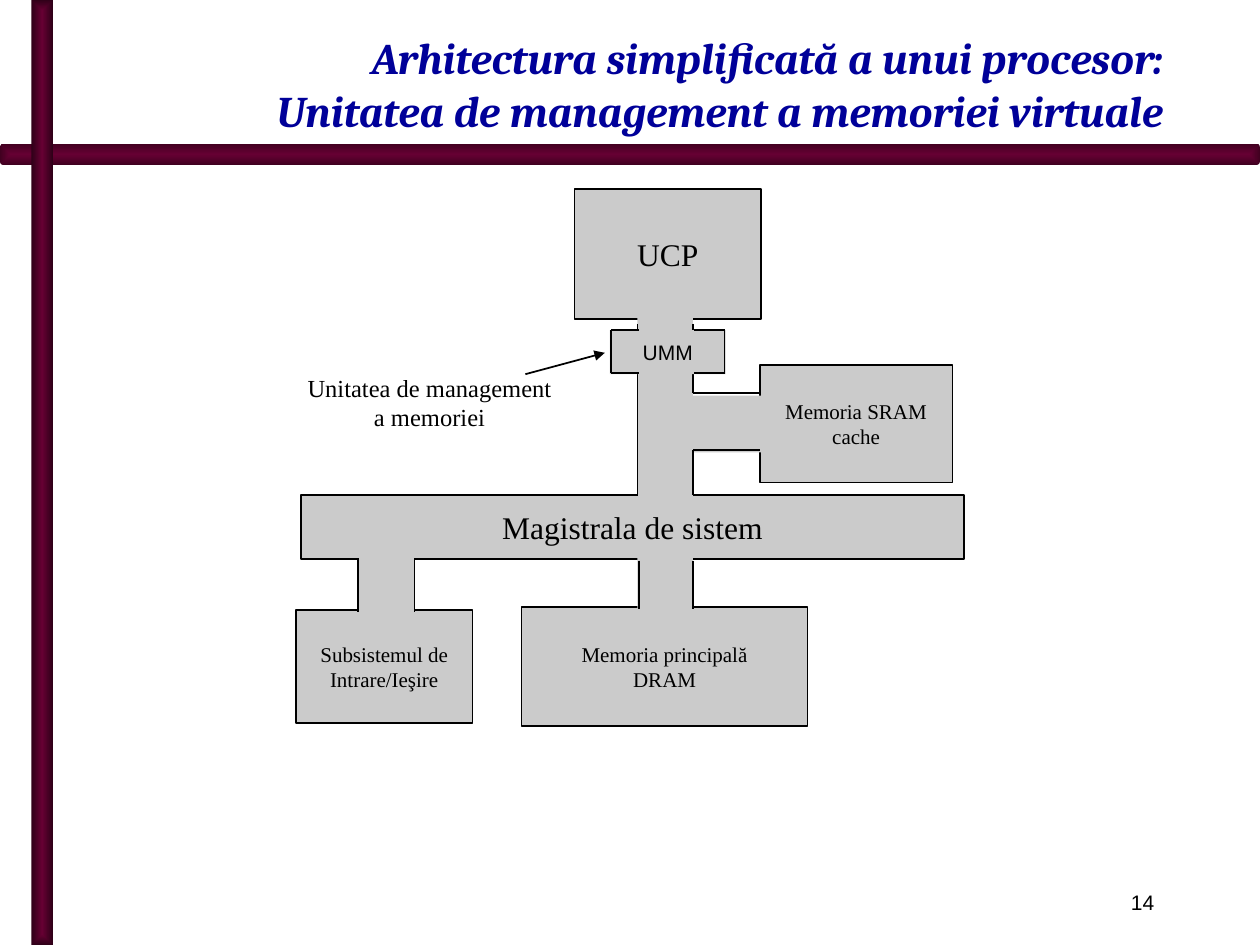
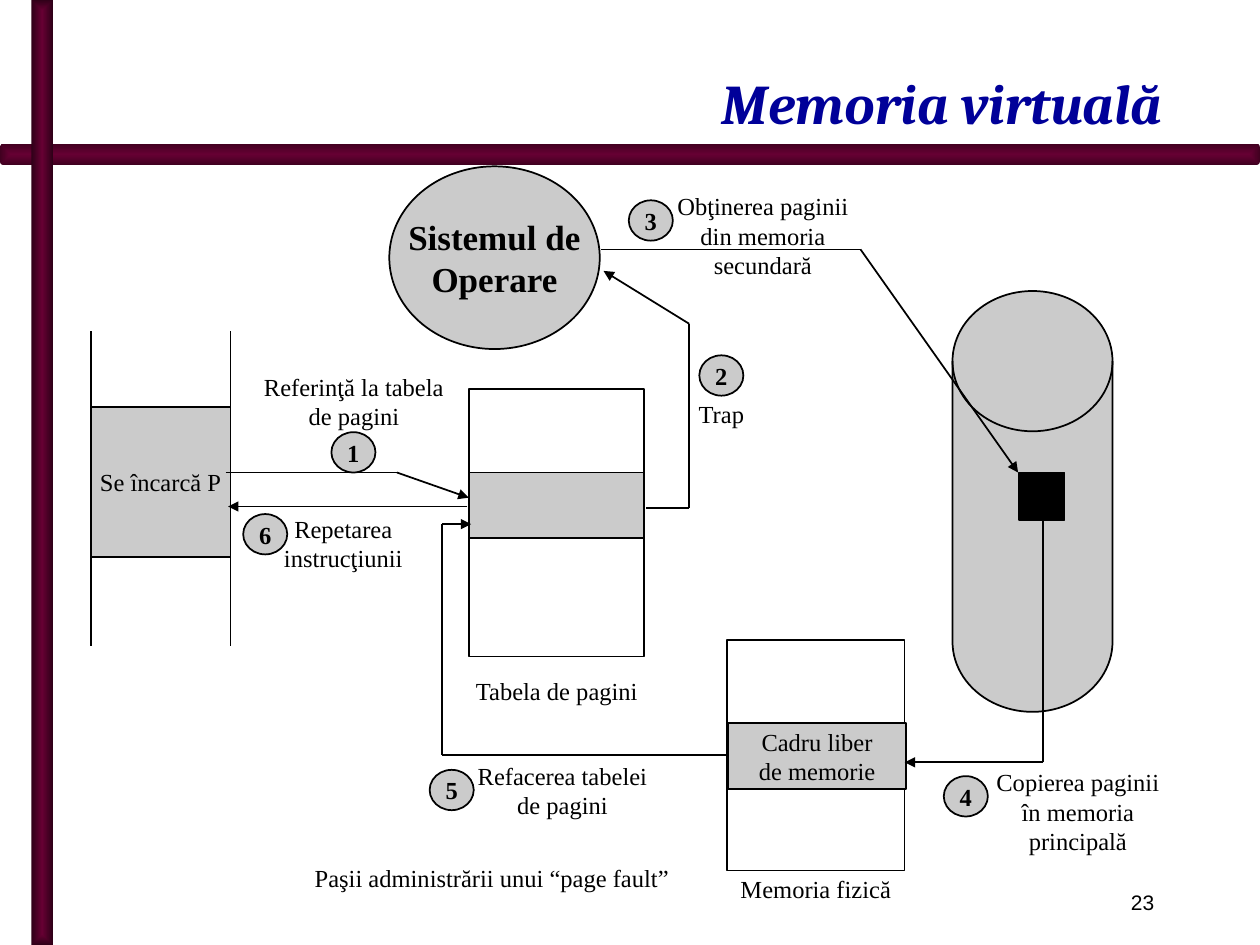
from lxml.etree import SubElement as Sub
from pptx import Presentation
from pptx.dml.color import RGBColor as Rgb
from pptx.enum.shapes import MSO_CONNECTOR as Conn, MSO_SHAPE as Kind
from pptx.enum.text import MSO_ANCHOR as Anchor, MSO_AUTO_SIZE as Auto, PP_ALIGN as Align
from pptx.oxml.ns import qn
from pptx.util import Pt

UNIT = 9144  # EMU per px, 100 px to the inch
HUES = {
    "ink": "000000",
    "gray": "CBCBCB",
    "title": "000099",
    "wine": "660033",
    "edge": "410020",
    "dark": "2F0018",
}
SERIF, SANS, HEAD = "Times New Roman", "Arial", "Cambria"


def px(*vals):
    return [v * UNIT for v in vals]


def hue(name):
    return Rgb.from_string(HUES[name])


class Deck:
    def __init__(self):
        self.prs = Presentation()
        self.prs.slide_width, self.prs.slide_height = px(1000, 750)
        self.slide = None

    def start(self, title, size, num):
        """Open a slide with its bands, title and page number."""
        self.slide = self.prs.slides.add_slide(self.prs.slide_layouts[5])
        self.band(Kind.ROUNDED_RECTANGLE, (0, 114, 1000, 17), "edge")
        self.band(Kind.RECTANGLE, (25, 0, 17, 750), "dark")
        head = self.slide.shapes.title
        head.left, head.top, head.width, head.height = px(83, 17, 850, 96)
        self.text(head, title, size, HEAD, "title", Align.RIGHT, Anchor.BOTTOM, True)
        head.text_frame.paragraphs[0].font.italic = True
        self.note((75, 701, 851, 30), str(num), 12, SANS, Align.RIGHT)

    def band(self, kind, at, rim):
        bar = self.shape(kind, at, None, False)
        bar.fill.gradient()
        for stop, name in zip(bar.fill.gradient_stops, ("wine", rim)):
            stop.color.rgb = hue(name)
        grad = bar.element.spPr.find(qn("a:gradFill"))
        grad.remove(grad.find(qn("a:lin")))
        way = Sub(grad, qn("a:path"), path="shape")
        Sub(way, qn("a:fillToRect"), l="50000", t="50000", r="50000", b="50000")

    def shape(self, kind, at, fill="gray", edge=True):
        item = self.slide.shapes.add_shape(kind, *px(*at))
        item.shadow.inherit = False
        if fill:
            item.fill.solid()
            item.fill.fore_color.rgb = hue(fill)
        else:
            item.fill.background()
        if edge:
            item.line.color.rgb = hue("ink")
            item.line.width = Pt(1)
        else:
            item.line.fill.background()
        return item

    def text(self, item, words, size, font=SERIF, color="ink",
             align=Align.CENTER, anchor=Anchor.MIDDLE, bold=False, wrap=True):
        frame = item.text_frame
        frame.auto_size = Auto.NONE
        frame.word_wrap = wrap
        frame.vertical_anchor = anchor
        frame.text = words
        for para in frame.paragraphs:
            para.alignment = align
            face = para.font
            face.name, face.size, face.bold = font, Pt(size), bold
            face.color.rgb = hue(color)
        return frame

    def box(self, at, words="", size=14, font=SERIF, fill="gray", edge=True,
            kind=Kind.RECTANGLE, bold=False):
        item = self.shape(kind, at, fill, edge)
        if words:
            self.text(item, words, size, font, bold=bold, wrap=False)

    def note(self, at, words, size=14, font=SERIF, align=Align.CENTER, tight=False):
        item = self.slide.shapes.add_textbox(*px(*at))
        frame = self.text(item, words, size, font, align=align, anchor=Anchor.TOP)
        if tight:
            frame.margin_left = frame.margin_right = 2 * UNIT
            frame.margin_top = frame.margin_bottom = UNIT

    def route(self, *dots, tip=False):
        """Join the dots with straight lines; tip puts an arrow on the last."""
        for here, there in zip(dots, dots[1:]):
            line = self.slide.shapes.add_connector(Conn.STRAIGHT, *px(*here, *there))
            line.line.color.rgb = hue("ink")
            line.line.width = Pt(1)
            props = line.element.spPr
            if tip and there == dots[-1]:
                Sub(props.find(qn("a:ln")), qn("a:tailEnd"), type="triangle")
            Sub(props, qn("a:effectLst"))


def system(deck):
    deck.start("Arhitectura simplificată a unui procesor:\v"
               "Unitatea de management a memoriei virtuale", 25, 14)

    # Units
    for at, words, size in (
        ((456, 150, 148, 103), "UCP", 18),
        ((239, 393, 526, 51), "Magistrala de sistem", 18),
        ((414, 482, 227, 94), "Memoria principală\nDRAM", 12),
        ((235, 484, 140, 90), "Subsistemul de\nIntrare/Ieşire", 12),
        ((603, 290, 153, 93), "Memoria SRAM\ncache", 12),
    ):
        deck.box(at, words, size)

    # Links between units, open at both ends
    for at in ((506, 249, 44, 159), (506, 430, 44, 61),
               (285, 432, 44, 61), (536, 314, 76, 45)):
        deck.box(at, edge=False)
    for x, top, end in ((506, 257, 394), (550, 257, 312), (550, 357, 393),
                        (284, 443, 486), (329, 443, 486),
                        (507, 445, 483), (550, 445, 483)):
        deck.route((x, top), (x, end))
    for y in (312, 357):
        deck.route((550, y), (603, y))

    # Memory management unit
    deck.box((484, 262, 92, 35), "UMM", 12, SANS, edge=False)
    for side, inner in ((485, 507), (575, 551)):
        deck.route((inner, 262), (side, 262), (side, 296), (inner, 296))
    deck.note((231, 291, 220, 57), "Unitatea de management\na memoriei")
    deck.route((417, 297), (480, 280), tip=True)


def fault(deck):
    deck.start("Memoria virtuală", 32, 23)

    # Program
    for x in (72, 183):
        deck.route((x, 263), (x, 513))
    deck.box((72, 323, 111, 119), "Se încarcă P")

    # Page table and physical memory
    deck.box((372, 309, 139, 212), fill=None)
    deck.box((372, 375, 139, 52))
    deck.box((577, 508, 141, 183), fill=None)
    deck.box((578, 574, 141, 52), "Cadru liber\nde memorie")

    # Operating system and disk
    deck.box((309, 132, 167, 145), "Sistemul de\nOperare", 20, kind=Kind.OVAL, bold=True)
    deck.box((756, 231, 127, 334), kind=Kind.FLOWCHART_MAGNETIC_DISK)
    deck.box((809, 375, 36, 38), fill="ink")

    # Arrows, in step order
    for dots in (
        ((179, 375), (315, 375), (372, 395)),
        ((513, 403), (547, 403), (547, 257), (479, 215)),
        ((477, 198), (683, 198), (808, 375)),
        ((828, 413), (828, 605), (718, 605)),
        ((578, 599), (351, 599), (351, 416), (374, 416)),
        ((371, 402), (181, 402)),
    ):
        deck.route(*dots, tip=True)

    # Step numbers and their notes
    steps = (
        ((263, 343), (198, 290, 166, 57), "Referinţă la tabela de pagini", False),
        ((555, 282), (538, 312, 69, 33), "Trap", False),
        ((499, 159), (535, 151, 141, 72), "Obţinerea paginii din memoria secundară", True),
        ((749, 616), (785, 608, 141, 72), "Copierea paginii în memoria principală", True),
        ((341, 611), (376, 603, 141, 49), "Refacerea tabelei de pagini", True),
        ((193, 408), (202, 407, 141, 49), "Repetarea instrucţiunii", True),
    )
    for num, (spot, at, words, tight) in enumerate(steps, 1):
        deck.box((*spot, 35, 32), str(num), kind=Kind.OVAL, bold=True)
        deck.note(at, words, tight=tight)

    # Captions
    deck.note((359, 532, 166, 33), "Tabela de pagini")
    deck.note((577, 689, 141, 33), "Memoria fizică")
    deck.note((116, 680, 549, 33), "Paşii administrării unui “page fault”")


def main():
    deck = Deck()
    system(deck)
    fault(deck)
    deck.prs.save("out.pptx")


if __name__ == "__main__":
    main()
